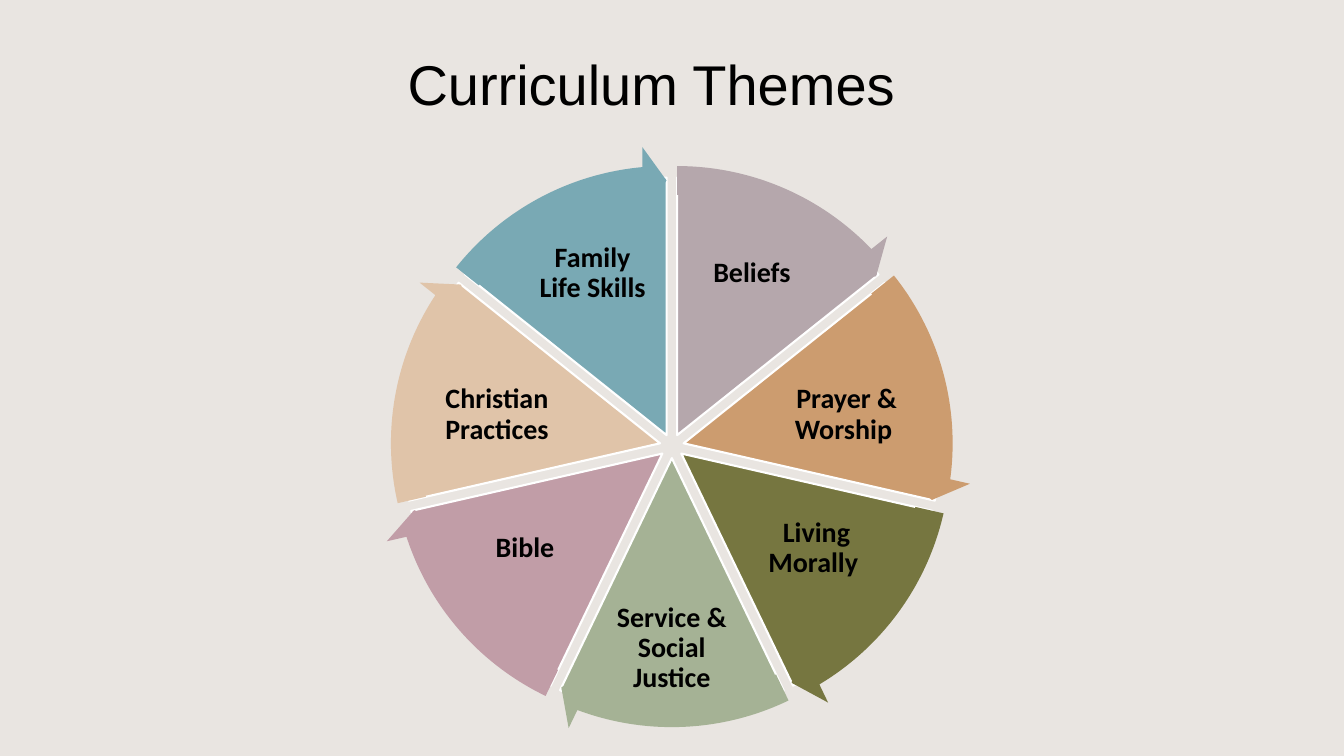
"""Build the Curriculum Themes slide: a wheel of seven wedges with arrows."""
from math import cos, pi, sin

from pptx import Presentation
from pptx.dml.color import RGBColor
from pptx.enum.shapes import MSO_SHAPE as Kind
from pptx.enum.text import MSO_ANCHOR as Anchor, PP_ALIGN as Align
from pptx.util import Pt

BACK = RGBColor(0xE9, 0xE5, 0xE1)
WHITE = RGBColor(0xFF, 0xFF, 0xFF)
BLACK = RGBColor(0x00, 0x00, 0x00)
MAUVE = RGBColor(0xB5, 0xA7, 0xAC)
AMBER = RGBColor(0xCC, 0x9C, 0x6F)
OLIVE = RGBColor(0x76, 0x76, 0x40)
SAGE = RGBColor(0xA5, 0xB2, 0x95)
ROSE = RGBColor(0xC1, 0x9D, 0xA7)
SAND = RGBColor(0xE0, 0xC4, 0xA9)
TEAL = RGBColor(0x79, 0xA9, 0xB4)

TITLE = "Curriculum Themes"
THEMES = [
    ("Beliefs", MAUVE, (493.2, 160.6, 87.8, 69.8)),
    ("Prayer & Worship ", AMBER, (554.4, 265.7, 100.8, 61.2)),
    ("Living Morally ", OLIVE, (539.3, 357.8, 87.8, 67.7)),
    ("Service & Social Justice", SAGE, (437, 432.7, 85.7, 61.2)),
    ("Bible ", ROSE, (333.4, 357.8, 87.8, 67.7)),
    ("Christian Practices", SAND, (304.6, 265.7, 100.8, 61.2)),
    ("Family Life Skills", TEAL, (379.4, 160.6, 87.8, 69.8)),
]

MID_X, MID_Y, PUSH = 479.9, 318.6, 8.64
PIE, RING = 367.9, 413.3
FULL, TOP = 216, 162
STEP = FULL / len(THEMES)
HEAD = 3.28


def write(frame, text, font, size, bold):
    """Put one centred run into a text frame."""
    frame.word_wrap = True
    frame.vertical_anchor = Anchor.MIDDLE
    para = frame.paragraphs[0]
    para.alignment = Align.CENTER
    run = para.add_run()
    run.text = text
    run.font.name = font
    run.font.size = Pt(size)
    run.font.bold = bold
    run.font.color.rgb = BLACK
    return para


def add_part(slide, kind, turn, size, color, adjust):
    """Add a wheel part pushed out from the centre along its middle angle."""
    angle = (turn + 0.5) * 2 * pi / len(THEMES)
    left = MID_X + PUSH * sin(angle) - size / 2
    top = MID_Y - PUSH * cos(angle) - size / 2
    part = slide.shapes.add_shape(kind, Pt(left), Pt(top), Pt(size), Pt(size))
    for spot, value in enumerate(adjust):
        part.adjustments[spot] = value
    part.shadow.inherit = False
    part.fill.solid()
    part.fill.fore_color.rgb = color
    return part


def add_label(slide, text, box):
    """Add the name of a theme."""
    label = slide.shapes.add_textbox(*map(Pt, box))
    frame = label.text_frame
    frame.margin_left = frame.margin_right = Pt(2)
    frame.margin_top = frame.margin_bottom = Pt(2)
    write(frame, text, "Calibri", 20, True).line_spacing = 0.9


def main():
    """Build and save the slide."""
    deck = Presentation()
    deck.slide_width, deck.slide_height = Pt(960), Pt(540)
    slide = deck.slides.add_slide(deck.slide_layouts[5])
    slide.background.fill.solid()
    slide.background.fill.fore_color.rgb = BACK

    title = slide.shapes.title
    title.left, title.top = Pt(36), Pt(28.8)
    title.width, title.height = Pt(858.2), Pt(60.5)
    write(title.text_frame, TITLE, "Arial", 40, False)

    for turn, (text, color, box) in enumerate(THEMES):
        start = (TOP + turn * STEP) % FULL
        end = (start + STEP) % FULL
        wedge = add_part(slide, Kind.PIE, turn, PIE, color, (start, end))
        wedge.line.color.rgb = WHITE
        wedge.line.width = Pt(1.5)
        add_label(slide, text, box)

    for turn, (text, color, box) in enumerate(THEMES):
        start = (TOP + turn * STEP) % FULL
        tip = (start + STEP - HEAD) % FULL
        bend = (0.05, HEAD, tip, start, 0.06)
        arrow = add_part(slide, Kind.CIRCULAR_ARROW, turn, RING, color, bend)
        arrow.line.fill.background()

    deck.save("out.pptx")


if __name__ == "__main__":
    main()
